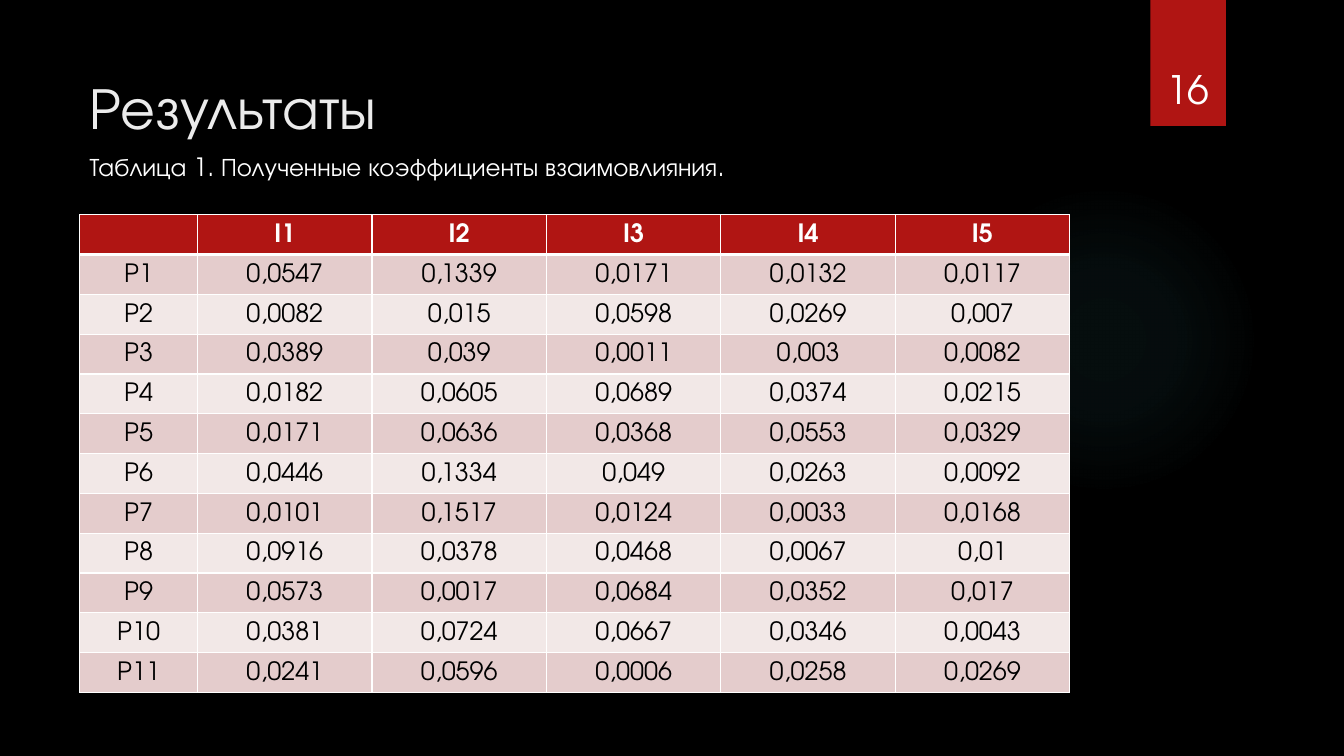
import lxml.etree
import pptx
import pptx.dml.color
import pptx.enum.shapes
import pptx.enum.text
import pptx.oxml.ns
import pptx.util

Inches = pptx.util.Inches
Pt = pptx.util.Pt
Align = pptx.enum.text.PP_ALIGN
Anchor = pptx.enum.text.MSO_ANCHOR
Preset = pptx.enum.shapes.MSO_SHAPE
qn = pptx.oxml.ns.qn

RED, WHITE, BLACK = "B01513", "FFFFFF", "000000"
TITLE_COLOR, GLOW = "EBEBEB", "50B9C1"
BANDS = ("E4CCCC", "F2E8E7")

HEADER = ["", "I1", "I2", "I3", "I4", "I5"]
COEFFICIENTS = [
    ["0,0547", "0,1339", "0,0171", "0,0132", "0,0117"],
    ["0,0082", "0,015", "0,0598", "0,0269", "0,007"],
    ["0,0389", "0,039", "0,0011", "0,003", "0,0082"],
    ["0,0182", "0,0605", "0,0689", "0,0374", "0,0215"],
    ["0,0171", "0,0636", "0,0368", "0,0553", "0,0329"],
    ["0,0446", "0,1334", "0,049", "0,0263", "0,0092"],
    ["0,0101", "0,1517", "0,0124", "0,0033", "0,0168"],
    ["0,0916", "0,0378", "0,0468", "0,0067", "0,01"],
    ["0,0573", "0,0017", "0,0684", "0,0352", "0,017"],
    ["0,0381", "0,0724", "0,0667", "0,0346", "0,0043"],
    ["0,0241", "0,0596", "0,0006", "0,0258", "0,0269"],
]


def rgb(color):
    return pptx.dml.color.RGBColor.from_string(color)


def child(parent, tag, **attributes):
    """Append an XML child with the given attributes."""
    element = lxml.etree.SubElement(parent, qn(tag))
    for name, value in attributes.items():
        element.set(name, str(value))
    return element


class Slide:
    font = "TeX Gyre Adventor"

    def __init__(self, page, background):
        self.page = page
        page.background.fill.solid()
        page.background.fill.fore_color.rgb = rgb(background)

    def style(self, paragraph, size, color, align=Align.LEFT, bold=False):
        paragraph.alignment = align
        font = paragraph.font
        font.name, font.size, font.bold = self.font, Pt(size), bold
        font.color.rgb = rgb(color)

    def shape(self, preset, area, color):
        shape = self.page.shapes.add_shape(preset, *map(Inches, area))
        shape.shadow.inherit = False
        shape.line.fill.background()
        shape.fill.solid()
        shape.fill.fore_color.rgb = rgb(color)
        return shape

    def glow(self, area, color, stops):
        """Draw a disc fading outwards; stops are (position %, opacity %)."""
        disc = self.shape(Preset.OVAL, area, color)
        solid = disc._element.spPr.find(qn("a:solidFill"))
        gradient = lxml.etree.Element(qn("a:gradFill"), rotWithShape="1")
        stop_list = child(gradient, "a:gsLst")
        for position, opacity in stops:
            stop = child(stop_list, "a:gs", pos=position * 1000)
            child(child(stop, "a:srgbClr", val=color), "a:alpha", val=opacity * 1000)
        center = child(gradient, "a:path", path="circle")
        child(center, "a:fillToRect", l=50000, t=50000, r=50000, b=50000)
        solid.getparent().replace(solid, gradient)

    def text(self, area, words, size, color, anchor=Anchor.TOP, align=Align.LEFT):
        box = self.page.shapes.add_textbox(*map(Inches, area))
        frame = box.text_frame
        frame.word_wrap = True
        frame.vertical_anchor = anchor
        frame.text = words
        self.style(frame.paragraphs[0], size, color, align)

    def borders(self, cell, **widths):
        properties = cell._tc.get_or_add_tcPr()
        for side in "LRTB":
            line = child(properties, "a:ln" + side, w=Pt(widths.get(side, 1)))
            child(child(line, "a:solidFill"), "a:srgbClr", val=WHITE)

    def cell(self, cell, words, row):
        header = row == 0
        rule = {0: {"B": 3}, 1: {"T": 3}}.get(row, {})
        self.borders(cell, **rule)
        cell.fill.solid()
        cell.fill.fore_color.rgb = rgb(RED if header else BANDS[(row - 1) % 2])
        cell.margin_left = cell.margin_right = cell.margin_top = Inches(0.02)
        cell.margin_bottom = 0
        cell.vertical_anchor = Anchor.MIDDLE
        cell.text = words
        self.style(cell.text_frame.paragraphs[0], 18, WHITE if header else BLACK,
                   Align.CENTER, header)

    def table(self, area, rows, column_widths):
        frame = self.page.shapes.add_table(
            len(rows), len(column_widths), *map(Inches, area))
        table = frame.table
        table.horz_banding = False
        for column, width in zip(table.columns, column_widths):
            column.width = Inches(width)
        for row, values in enumerate(rows):
            for column, words in enumerate(values):
                self.cell(table.cell(row, column), words, row)


def main():
    deck = pptx.Presentation()
    deck.slide_width, deck.slide_height = Inches(13.33), Inches(7.5)
    slide = Slide(deck.slides.add_slide(deck.slide_layouts[6]), BLACK)

    slide.glow((9.41, 1.83, 3.08, 3.08), GLOW, [(0, 7), (36, 6), (69, 0), (100, 0)])
    slide.shape(Preset.RECTANGLE, (11.41, 0, 0.75, 1.25), RED)
    slide.text((0.79, 0, 4.96, 1.45), "Результаты", 42, TITLE_COLOR, Anchor.BOTTOM)

    rows = [HEADER] + [[f"P{number}", *values]
                       for number, values in enumerate(COEFFICIENTS, 1)]
    slide.table((0.79, 2.13, 9.84, 4.74), rows, [1.17] + [1.73] * 5)

    slide.text((0.79, 1.45, 9.65, 0.68),
               "Таблица 1. Полученные коэффициенты взаимовлияния.", 18, WHITE)
    slide.text((11.32, 0.32, 0.92, 0.84), "16", 28, WHITE, Anchor.BOTTOM, Align.CENTER)
    deck.save("out.pptx")


if __name__ == "__main__":
    main()
